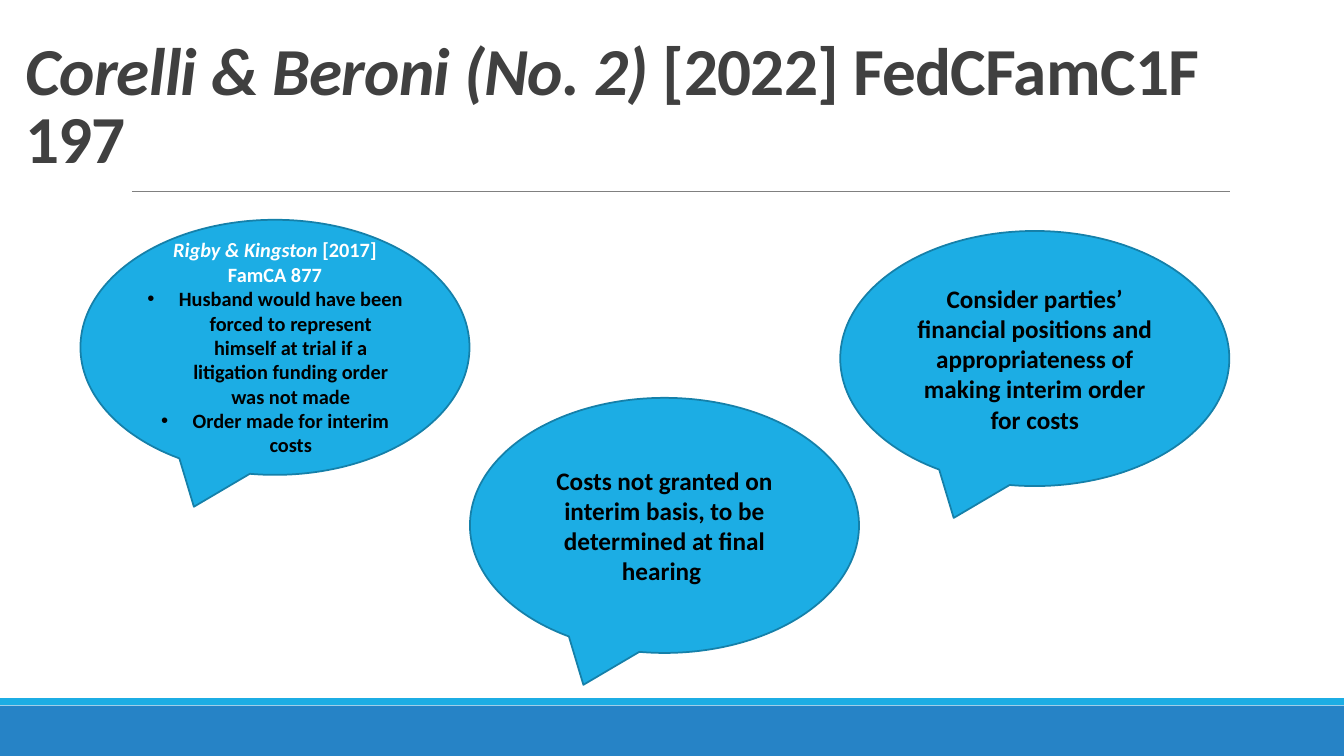
from dataclasses import dataclass

from lxml import etree
from pptx import Presentation
from pptx.dml.color import RGBColor
from pptx.enum.shapes import MSO_CONNECTOR, MSO_SHAPE
from pptx.enum.text import MSO_ANCHOR, MSO_AUTO_SIZE, PP_ALIGN
from pptx.oxml.ns import qn
from pptx.util import Pt

RECTANGLE = MSO_SHAPE.RECTANGLE
CALLOUT = MSO_SHAPE.OVAL_CALLOUT
STRAIGHT = MSO_CONNECTOR.STRAIGHT
LEFT, CENTER = PP_ALIGN.LEFT, PP_ALIGN.CENTER
MIDDLE, BOTTOM = MSO_ANCHOR.MIDDLE, MSO_ANCHOR.BOTTOM
NO_FIT = MSO_AUTO_SIZE.NONE
TITLE_ONLY = 5


@dataclass(frozen=True)
class Theme:
    font: str = "Calibri"
    title_size: float = 48
    body_size: float = 18
    small_size: float = 14.5
    title_ink: str = "404040"
    ink: str = "000000"
    light: str = "FFFFFF"
    bright: str = "1CADE4"
    outline: str = "1580A9"
    footer: str = "2683C6"
    rule: str = "808080"


class SlideBuilder:
    def __init__(self, slide, theme):
        self.slide = slide
        self.theme = theme

    def add_span(self, para, text, size, color, italic=False):
        span = para.add_run()
        span.text = text
        formats = {"name": self.theme.font, "size": Pt(size), "bold": True, "italic": italic}
        for name, value in formats.items():
            setattr(span.font, name, value)
        span.font.color.rgb = RGBColor.from_string(color)
        return span

    def set_frame(self, frame, anchor):
        formats = {"word_wrap": True, "auto_size": NO_FIT, "vertical_anchor": anchor}
        for name, value in formats.items():
            setattr(frame, name, value)

    def title(self, place, spans):
        box = self.slide.shapes.title
        for name, value in zip(("left", "top", "width", "height"), place):
            setattr(box, name, Pt(value))
        self.set_frame(box.text_frame, BOTTOM)
        para = box.text_frame.paragraphs[0]
        para.alignment, para.line_spacing = LEFT, 0.85
        for text, italic in spans:
            span = self.add_span(para, text, self.theme.title_size, self.theme.title_ink, italic)
            span._r.get_or_add_rPr().set("spc", "-50")

    def shape(self, kind, place, fill):
        shape = self.slide.shapes.add_shape(kind, *map(Pt, place))
        shape.shadow.inherit = False
        shape.fill.solid()
        shape.fill.fore_color.rgb = RGBColor.from_string(fill)
        shape.line.fill.background()
        return shape

    def rule(self, left, right, top):
        line = self.slide.shapes.add_connector(STRAIGHT, Pt(left), Pt(top), Pt(right), Pt(top))
        line.line.color.rgb = RGBColor.from_string(self.theme.rule)
        line.line.width = Pt(0.5)
        etree.SubElement(line._element.spPr, qn("a:effectLst"))

    def bullet(self, para, indent):
        properties = para._p.get_or_add_pPr()
        properties.set("marL", str(Pt(indent)))
        properties.set("indent", str(-Pt(indent)))
        etree.SubElement(properties, qn("a:buFont"), typeface="Arial")
        etree.SubElement(properties, qn("a:buChar"), char="•")

    def callout(self, left, top, size, paragraphs):
        bubble = self.shape(CALLOUT, (left, top, 277.9, 182.2), self.theme.bright)
        bubble.line.color.rgb = RGBColor.from_string(self.theme.outline)
        bubble.line.width = Pt(1.25)
        frame = bubble.text_frame
        self.set_frame(frame, MIDDLE)
        for number, (bulleted, spans) in enumerate(paragraphs):
            para = frame.add_paragraph() if number else frame.paragraphs[0]
            para.alignment = CENTER
            if bulleted:
                self.bullet(para, 22.5)
            for text, color, italic in spans:
                self.add_span(para, text, size, color, italic)


def main():
    theme = Theme()
    deck = Presentation()
    deck.slide_width, deck.slide_height = Pt(960), Pt(540)
    page = SlideBuilder(deck.slides.add_slide(deck.slide_layouts[TITLE_ONLY]), theme)

    # Footer bands and title rule
    page.shape(RECTANGLE, (0, 504, 960, 36), theme.footer)
    page.shape(RECTANGLE, (0, 498.7, 960, 5), theme.bright)
    page.rule(94.2, 878.8, 136.6)

    # Title
    page.title((10.8, 15.8, 902.2, 114.5), [
        ("Corelli & Beroni (No. 2) ", True),
        ("[2022] FedCFamC1F 197", False),
    ])

    # Callouts
    page.callout(57.5, 157, theme.small_size, [
        (False, [("Rigby & Kingston ", theme.light, True),
                 ("[2017] FamCA 877", theme.light, False)]),
        (True, [("Husband would have been forced to represent himself at trial "
                 "if a litigation funding order was not made", theme.ink, False)]),
        (True, [("Order made for interim costs", theme.ink, False)]),
    ])
    remarks = [
        (600.2, 165, "Consider parties’ financial positions and appropriateness "
                     "of making interim order for costs"),
        (335.7, 284.2, "Costs not granted on interim basis, to be determined at final hearing "),
    ]
    for left, top, text in remarks:
        page.callout(left, top, theme.body_size, [(False, [(text, theme.ink, False)])])

    deck.save("out.pptx")


if __name__ == "__main__":
    main()
